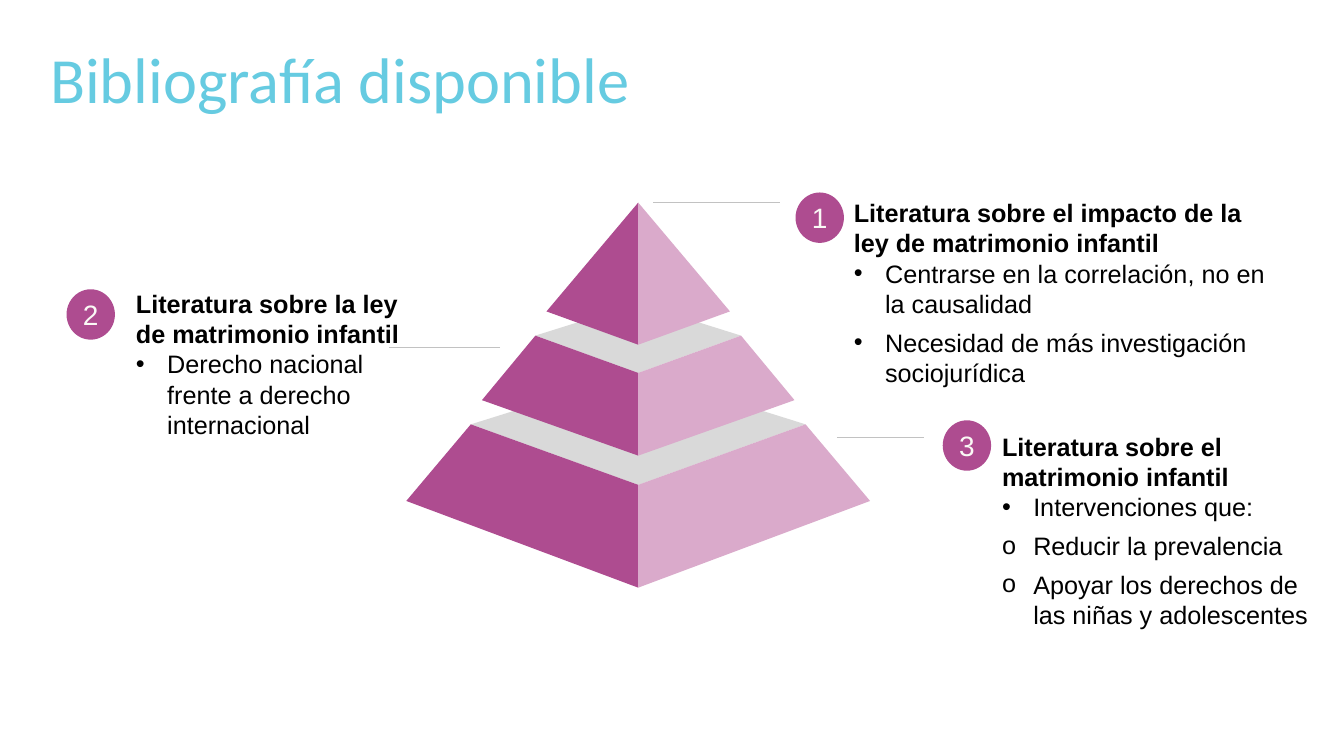
from lxml.etree import SubElement
from pptx import Presentation
from pptx.dml.color import RGBColor
from pptx.enum.shapes import MSO_CONNECTOR, MSO_SHAPE
from pptx.enum.text import MSO_ANCHOR, PP_ALIGN
from pptx.oxml.ns import qn
from pptx.util import Inches, Pt


def color(hex_code):
    return RGBColor.from_string(hex_code)


class PyramidSlide:
    dark, light, lid = "AE4C90", "DAAACB", "D9D9D9"
    rule, ink, number_ink, heading = "C2C2C2", "000000", "FAF9F5", "66CBE1"

    def __init__(self, slide):
        self.shapes = slide.shapes

    def format_runs(self, paragraph, size, ink, font="Arial", bold=False):
        for run in paragraph.runs:
            run.font.size = Pt(size)
            run.font.name = font
            run.font.bold = bold
            run.font.color.rgb = color(ink)

    def frame(self, left, top, width, height, inset_y):
        area = self.shapes.add_textbox(Inches(left), Inches(top), Inches(width), Inches(height))
        frame = area.text_frame
        frame.word_wrap = True
        frame.vertical_anchor = MSO_ANCHOR.MIDDLE
        frame.margin_left = frame.margin_right = Inches(0.1)
        frame.margin_top = frame.margin_bottom = Inches(inset_y)
        return frame

    def title(self, text, box):
        frame = self.frame(*box, inset_y=0.05)
        frame.text = text
        self.format_runs(frame.paragraphs[0], 46, self.heading, "Calibri")

    def bullet(self, paragraph, mark):
        properties = paragraph._p.get_or_add_pPr()
        properties.set("marL", str(Inches(0.31)))
        properties.set("indent", str(Inches(-0.31)))
        bullet_color = SubElement(properties, qn("a:buClr"))
        SubElement(bullet_color, qn("a:srgbClr")).set("val", self.ink)
        SubElement(properties, qn("a:buFont")).set("typeface", "Arial")
        SubElement(properties, qn("a:buChar")).set("char", mark)

    def literature(self, heading, points, box, space_after):
        frame = self.frame(*box, inset_y=0.1)
        frame.text = heading
        self.format_runs(frame.paragraphs[0], 18, self.ink, bold=True)
        for mark, text in points:
            point = frame.add_paragraph()
            point.text = text
            point.space_after = Pt(space_after)
            self.bullet(point, mark)
            self.format_runs(point, 18, self.ink)

    def number(self, text, left, top):
        badge = self.shapes.add_shape(
            MSO_SHAPE.OVAL, Inches(left), Inches(top), Inches(0.48), Inches(0.5))
        self.paint(badge, self.dark)
        frame = badge.text_frame
        frame.margin_left = frame.margin_right = frame.margin_top = frame.margin_bottom = 0
        frame.vertical_anchor = MSO_ANCHOR.MIDDLE
        frame.text = text
        frame.paragraphs[0].alignment = PP_ALIGN.CENTER
        self.format_runs(frame.paragraphs[0], 20, self.number_ink)

    def paint(self, shape, fill):
        shape.shadow.inherit = False
        shape.fill.solid()
        shape.fill.fore_color.rgb = color(fill)
        shape.line.fill.background()

    def leader(self, start, end, y):
        leader = self.shapes.add_connector(
            MSO_CONNECTOR.STRAIGHT, Inches(start), Inches(y), Inches(end), Inches(y))
        leader.line.color.rgb = color(self.rule)
        leader.line.width = Pt(0.75)
        SubElement(leader._element.spPr, qn("a:effectLst"))

    def face(self, points, fill):
        corners = [(Inches(x), Inches(y)) for x, y in points]
        builder = self.shapes.build_freeform(*corners[0], scale=1.0)
        builder.add_line_segments(corners[1:], close=True)
        self.paint(builder.convert_to_shape(), fill)

    def tier(self, top, base, back_y=None):
        center = 6.33
        top_half, top_y, top_front = top
        base_half, base_y, base_front = base
        if back_y is not None:
            self.face([(center - top_half, top_y), (center, top_front),
                       (center + top_half, top_y), (center, back_y)], self.lid)
        for side, fill in ((-1, self.dark), (1, self.light)):
            self.face([(center + side * top_half, top_y), (center + side * base_half, base_y),
                       (center, base_front), (center, top_front)], fill)


def main():
    presentation = Presentation()
    presentation.slide_width = Inches(13.33)
    presentation.slide_height = Inches(7.5)
    page = PyramidSlide(presentation.slides.add_slide(presentation.slide_layouts[6]))

    for start, end, y in ((8.3, 9.16, 4.34), (4.96, 3.86, 3.45), (6.48, 7.74, 2.01)):
        page.leader(start, end, y)

    page.literature(
        "Literatura sobre el matrimonio infantil",
        [("•", "Intervenciones que:"), ("o", "Reducir la prevalencia"),
         ("o", "Apoyar los derechos de las niñas y adolescentes")],
        (9.84, 4.16, 3.5, 2.2), 6)
    page.literature(
        "Literatura sobre la ley de matrimonio infantil",
        [("•", "Derecho nacional frente a derecho internacional")],
        (1.25, 2.45, 2.82, 2.32), 0)
    page.literature(
        "Literatura sobre el impacto de la ley de matrimonio infantil",
        [("•", "Centrarse en la correlación, no en la causalidad"),
         ("•", "Necesidad de más investigación sociojurídica")],
        (8.37, 1.64, 4.31, 2.52), 6)

    page.tier((1.66, 4.21, 4.81), (2.3, 4.97, 5.83), 3.69)
    page.tier((1.02, 3.33, 3.7), (1.55, 3.97, 4.52), 3.01)
    page.tier((0, 2.01, 2.01), (0.91, 3.09, 3.42))

    for text, left, top in (("2", 0.66, 2.87), ("1", 7.89, 1.91), ("3", 9.35, 4.17)):
        page.number(text, left, top)

    page.title("Bibliografía disponible", (0.4, 0.26, 6.33, 1.03))
    presentation.save("out.pptx")


if __name__ == "__main__":
    main()
